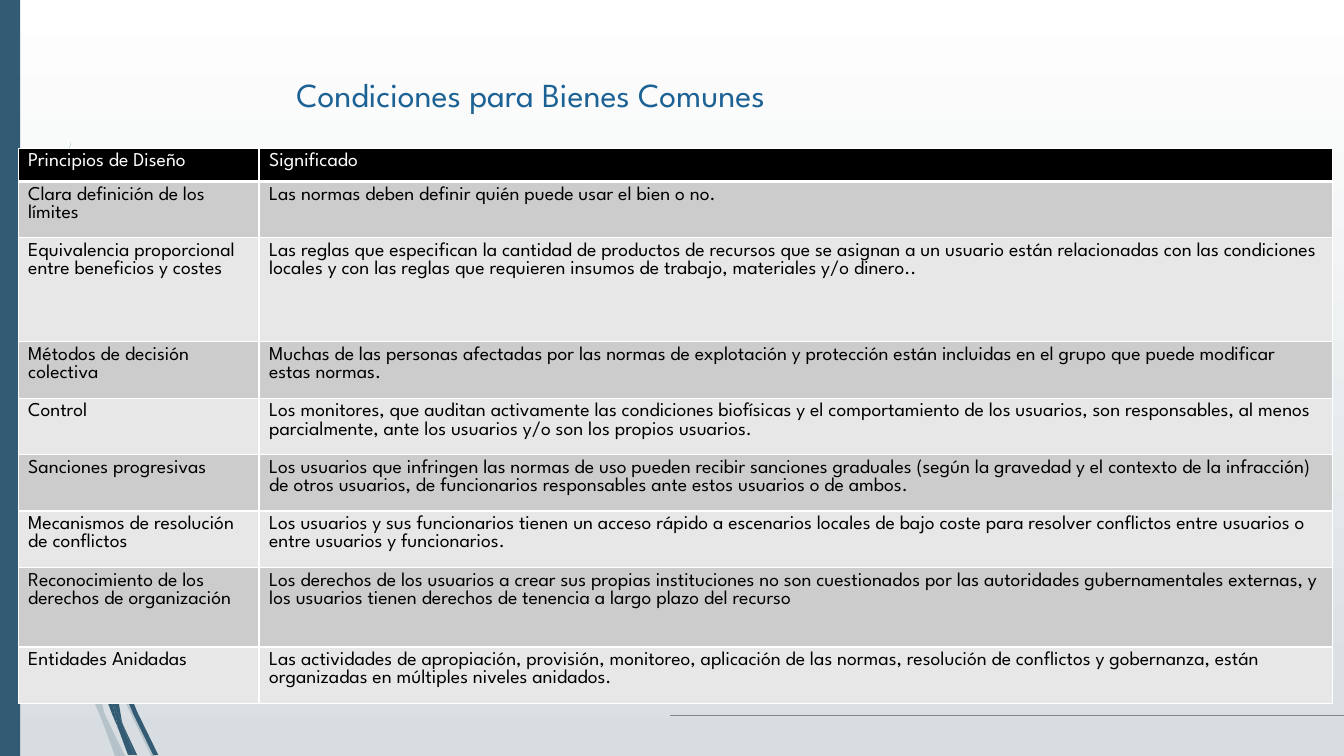
from lxml.etree import SubElement
from pptx import Presentation
from pptx.dml.color import RGBColor
from pptx.enum.shapes import MSO_CONNECTOR, MSO_SHAPE
from pptx.enum.text import MSO_ANCHOR, MSO_AUTO_SIZE, PP_ALIGN
from pptx.oxml.ns import qn
from pptx.util import Pt

PX = 9144
WIDE, HIGH = 1333, 750
FONT = "League Spartan"
HUES = {
    "white": "FFFFFF", "mist": "D7DDE0", "steel": "335B74", "rule": "7F8487",
    "title": "1D6294", "black": "000000", "dark": "CCCCCC", "light": "E7E7E7",
}

PALE = [
    [(92, 607), (88, 596), (88, 610), (123, 694), (150, 750), (155, 750),
     (127, 692)],
    [(119, 750), (124, 750), (105, 711)],
    [(93, 683), (70, 619), (31, 469), (17, 376), (11, 350), (28, 470),
     (65, 621), (92, 693), (101, 714), (99, 707)],
    [(84, 599), (87, 646), (93, 683), (96, 692), (105, 711), (103, 706),
     (91, 646), (88, 610), (88, 608)],
    [(101, 714), (114, 750), (119, 750)],
    [(96, 692), (93, 683), (99, 707), (101, 714), (119, 750), (105, 711)],
]
BOLD = [
    [(113, 649), (110, 641), (111, 656), (132, 708), (152, 749), (157, 749),
     (136, 706)],
    [(110, 691), (98, 657), (72, 556), (64, 505), (57, 477), (68, 557),
     (93, 659), (111, 708), (117, 722), (116, 717)],
    [(60, 472), (58, 453), (54, 349), (58, 245), (63, 193), (70, 141),
     (62, 193), (56, 245), (52, 349), (55, 449)],
    [(133, 749), (136, 749), (122, 719)],
    [(117, 722), (127, 749), (131, 749)],
    [(106, 645), (110, 691), (116, 706), (122, 719), (121, 716), (111, 656),
     (109, 651)],
    [(116, 706), (110, 691), (116, 717), (117, 722), (130, 749), (133, 749),
     (122, 719)],
]

COLS = [239, 1065]
ROWS = [33, 56, 103, 56, 56, 56, 56, 79, 56]
CELLS = [
    ("Principios de Diseño", "Significado"),
    ("Clara definición de los límites",
     "Las normas deben definir quién puede usar el bien o no."),
    ("Equivalencia proporcional entre beneficios y costes",
     "Las reglas que especifican la cantidad de productos de recursos que se "
     "asignan a un usuario están relacionadas con las condiciones locales y "
     "con las reglas que requieren insumos de trabajo, materiales y/o dinero.."),
    ("Métodos de decisión colectiva",
     "Muchas de las personas afectadas por las normas de explotación y "
     "protección están incluidas en el grupo que puede modificar estas normas."),
    ("Control",
     "Los monitores, que auditan activamente las condiciones biofísicas y el "
     "comportamiento de los usuarios, son responsables, al menos parcialmente, "
     "ante los usuarios y/o son los propios usuarios."),
    ("Sanciones progresivas",
     "Los usuarios que infringen las normas de uso pueden recibir sanciones "
     "graduales (según la gravedad y el contexto de la infracción) de otros "
     "usuarios, de funcionarios responsables ante estos usuarios o de ambos."),
    ("Mecanismos de resolución de conflictos",
     "Los usuarios y sus funcionarios tienen un acceso rápido a escenarios "
     "locales de bajo coste para resolver conflictos entre usuarios o entre "
     "usuarios y funcionarios."),
    ("Reconocimiento de los derechos de organización",
     "Los derechos de los usuarios a crear sus propias instituciones no son "
     "cuestionados por las autoridades gubernamentales externas, y los usuarios "
     "tienen derechos de tenencia a largo plazo del recurso"),
    ("Entidades Anidadas",
     "Las actividades de apropiación, provisión, monitoreo, aplicación de las "
     "normas, resolución de conflictos y gobernanza, están organizadas en "
     "múltiples niveles anidados."),
]


class Board:
    """Hold the style and the current slide."""

    def __init__(self, slide):
        """Keep the slide to draw on."""
        self.slide = slide
        self.shapes = slide.shapes

    def hue(self, name):
        """Look up a colour."""
        return RGBColor.from_string(HUES[name])

    def paint(self, shape, name):
        """Fill a shape flat, with no line or shadow."""
        shape.shadow.inherit = False
        shape.fill.solid()
        shape.fill.fore_color.rgb = self.hue(name)
        shape.line.fill.background()

    def label(self, frame, text, size, name):
        """Set and format the text of a frame."""
        frame.text = text
        font = frame.paragraphs[0].runs[0].font
        font.name, font.size = FONT, Pt(size)
        font.color.rgb = self.hue(name)

    def ground(self, top, base):
        """Shade the background from top to base."""
        fill = self.slide.background.fill
        fill.gradient()
        fill.gradient_angle = 270
        for stop, name in zip(fill.gradient_stops, (top, base)):
            stop.color.rgb = self.hue(name)

    def wisp(self, points, name, alpha=100):
        """Draw a closed outline."""
        pen = self.shapes.build_freeform(*points[0], scale=PX)
        pen.add_line_segments(points[1:], close=True)
        shape = pen.convert_to_shape()
        self.paint(shape, name)
        if alpha < 100:
            tone = shape._element.spPr.find(".//" + qn("a:srgbClr"))
            SubElement(tone, qn("a:alpha"), val=str(alpha * 1000))

    def bar(self, x, y, w, h, name):
        """Draw a plain rectangle."""
        box = [n * PX for n in (x, y, w, h)]
        self.paint(self.shapes.add_shape(MSO_SHAPE.RECTANGLE, *box), name)

    def rule(self, x, y, end, name):
        """Draw a thin level line."""
        ends = [n * PX for n in (x, y, end, y)]
        line = self.shapes.add_connector(MSO_CONNECTOR.STRAIGHT, *ends)
        line.line.color.rgb = self.hue(name)
        line.line.width = Pt(0.75)
        SubElement(line._element.spPr, qn("a:effectLst"))

    def title(self, x, y, w, h, text):
        """Move and format the title."""
        shape = self.shapes.title
        shape.left, shape.top, shape.width, shape.height = (
            n * PX for n in (x, y, w, h))
        frame = shape.text_frame
        frame.auto_size = MSO_AUTO_SIZE.NONE
        frame.vertical_anchor = MSO_ANCHOR.TOP
        self.label(frame, text, 24, "title")
        frame.paragraphs[0].alignment = PP_ALIGN.LEFT

    def edge(self, cell, side, width):
        """Draw one white cell border."""
        line = SubElement(cell._tc.get_or_add_tcPr(), qn("a:ln" + side),
                          w=str(Pt(width)))
        fill = SubElement(line, qn("a:solidFill"))
        SubElement(fill, qn("a:srgbClr"), val=HUES["white"])

    def table(self, x, y, cols, rows, texts):
        """Draw the table with a black head and two row shades."""
        box = [n * PX for n in (x, y, sum(cols), sum(rows))]
        grid = self.shapes.add_table(len(rows), len(cols), *box).table
        grid.horz_banding = False
        for col, wide in zip(grid.columns, cols):
            col.width = wide * PX
        for i, (row, high) in enumerate(zip(grid.rows, rows)):
            row.height = high * PX
            shade = ("light", "dark")[i % 2] if i else "black"
            ink = "black" if i else "white"
            for cell, text in zip(row.cells, texts[i]):
                self.label(cell.text_frame, text, 14, ink)
                for side in "LRTB":
                    thick = (side, i) in (("B", 0), ("T", 1))
                    self.edge(cell, side, 3 if thick else 1)
                cell.fill.solid()
                cell.fill.fore_color.rgb = self.hue(shade)


def main():
    """Build and save the slide."""
    deck = Presentation()
    deck.slide_width, deck.slide_height = WIDE * PX, HIGH * PX
    board = Board(deck.slides.add_slide(deck.slide_layouts[5]))
    board.ground("white", "mist")
    for points in PALE:
        board.wisp(points, "steel", 20)
    for points in BOLD:
        board.wisp(points, "steel")
    board.bar(0, 0, 20, HIGH, "steel")
    board.rule(665, 710, WIDE, "rule")
    board.title(284, 68, 975, 140, "Condiciones para Bienes Comunes")
    board.table(18, 147, COLS, ROWS, CELLS)
    deck.save("out.pptx")


if __name__ == "__main__":
    main()
